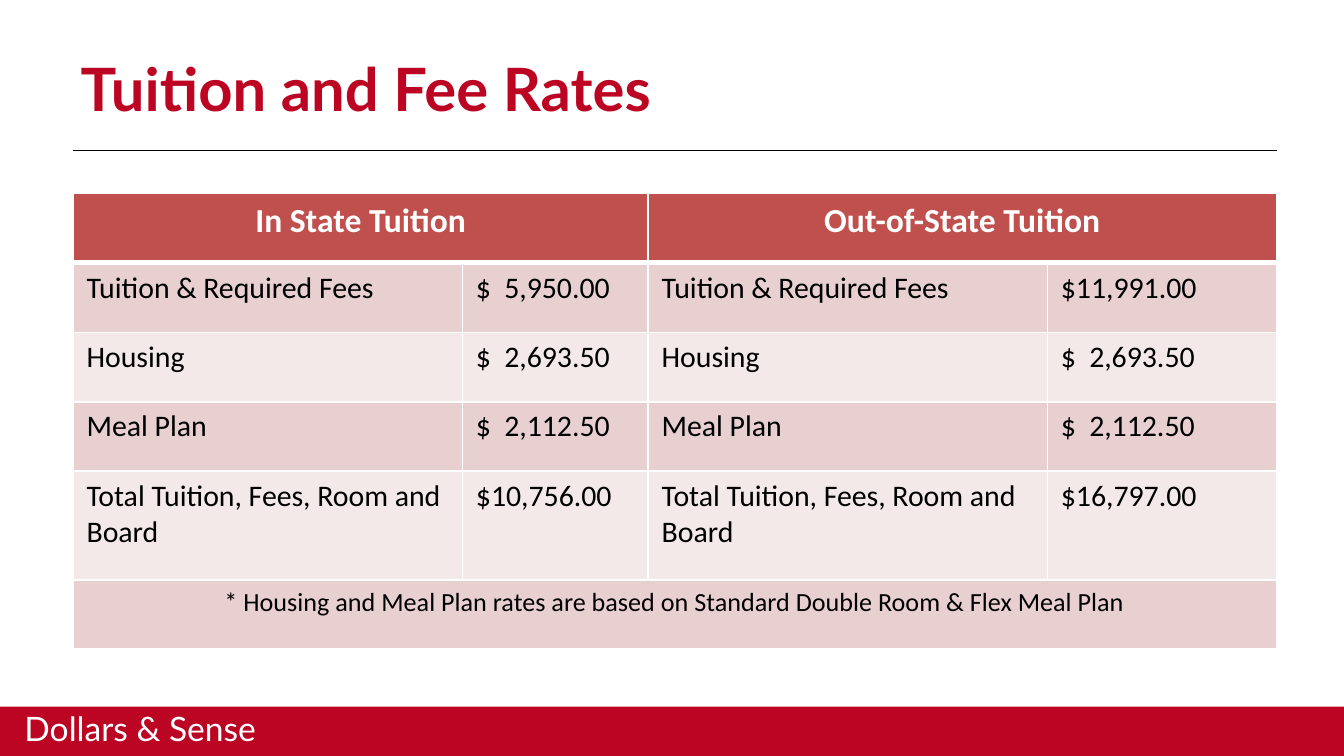
"""Build the tuition and fee rates slide."""
from lxml.etree import SubElement
from pptx import Presentation
from pptx.dml.color import RGBColor
from pptx.enum.shapes import MSO_CONNECTOR, MSO_SHAPE
from pptx.enum.text import MSO_ANCHOR, PP_ALIGN
from pptx.oxml import parse_xml
from pptx.oxml.ns import nsdecls, qn
from pptx.util import Pt

RED = RGBColor(0xBC, 0x05, 0x23)
HEADER = RGBColor(0xC0, 0x50, 0x4D)
BAND_DARK = RGBColor(0xE8, 0xD0, 0xD0)
BAND_LIGHT = RGBColor(0xF4, 0xE9, 0xE9)
BLACK = RGBColor(0, 0, 0)
WHITE = RGBColor(0xFF, 0xFF, 0xFF)


def add_span(para, text, font, size, color, bold=False):
    span = para.add_run()
    span.text = text
    span.font.name = font
    span.font.size = Pt(size)
    span.font.color.rgb = color
    span.font.bold = bold


def set_borders(cell, widths):
    properties = cell._tc.get_or_add_tcPr()
    for index, (side, width) in enumerate(widths.items()):
        properties.insert(index, parse_xml(
            f'<a:ln{side} {nsdecls("a")} w="{Pt(width)}"><a:solidFill>'
            f'<a:srgbClr val="{WHITE}"/></a:solidFill></a:ln{side}>'))


deck = Presentation()
deck.slide_width, deck.slide_height = Pt(720), Pt(405)
page = deck.slides.add_slide(deck.slide_layouts[5])

bar = page.shapes.add_shape(MSO_SHAPE.RECTANGLE, Pt(0), Pt(378.6), Pt(720), Pt(26.4))
bar.shadow.inherit = False
bar.fill.solid()
bar.fill.fore_color.rgb = RED
bar.line.fill.background()

title = page.shapes.title
title.left, title.top, title.width, title.height = Pt(36), Pt(24), Pt(648), Pt(67.5)
title.text_frame.vertical_anchor = MSO_ANCHOR.TOP
title_para = title.text_frame.paragraphs[0]
title_para.alignment = PP_ALIGN.LEFT
add_span(title_para, "Tuition and Fee Rates", "Lato", 32, RED, True)

footer = page.shapes.add_textbox(Pt(6), Pt(375.8), Pt(248), Pt(29))
footer.text_frame.word_wrap = True
add_span(footer.text_frame.paragraphs[0], "Dollars & Sense", "Lato", 18, WHITE)

rule = page.shapes.add_connector(MSO_CONNECTOR.STRAIGHT, Pt(39), Pt(80.8), Pt(684), Pt(80.8))
rule.line.color.rgb = BLACK
rule.line.width = Pt(0.75)
SubElement(rule._element.spPr, qn("a:effectLst"))

headings = ["In State Tuition", "", "Out-of-State Tuition", ""]
rates = [
    ("Tuition & Required Fees", "$\t5,950.00", "$11,991.00"),
    ("Housing", "$\t2,693.50", "$\t2,693.50"),
    ("Meal Plan", "$\t2,112.50", "$\t2,112.50"),
    ("Total Tuition, Fees, Room and Board", "$10,756.00", "$16,797.00"),
]
note = "* Housing and Meal Plan rates are based on Standard Double Room & Flex Meal Plan"
rows = [headings]
rows += [[item, in_state, item, out_of_state] for item, in_state, out_of_state in rates]
rows.append([note, "", "", ""])
column_widths = [208.6, 99.5, 213.9, 122.6]
row_heights = [37.2, 37.2, 37.2, 37.2, 58.2, 37.2]

table = page.shapes.add_table(
    len(rows), len(column_widths), Pt(39.2), Pt(103.7),
    Pt(sum(column_widths)), Pt(sum(row_heights))).table
for column, width in zip(table.columns, column_widths):
    column.width = Pt(width)
for row, height in zip(table.rows, row_heights):
    row.height = Pt(height)

last = len(rows) - 1
for row_index, texts in enumerate(rows):
    for column_index, text in enumerate(texts):
        cell = table.cell(row_index, column_index)
        cell.fill.solid()
        band = BAND_DARK if row_index % 2 else BAND_LIGHT
        cell.fill.fore_color.rgb = HEADER if row_index == 0 else band
        set_borders(cell, {"L": 1, "R": 1, "T": 3 if row_index == 1 else 1,
                           "B": 3 if row_index == 0 else 1})
        if not text:
            continue
        para = cell.text_frame.paragraphs[0]
        if "\t" in text:
            tabs = SubElement(para._p.get_or_add_pPr(), qn("a:tabLst"))
            SubElement(tabs, qn("a:tab"), pos=str(Pt(15.2)), algn="l")
        if row_index in (0, last):
            para.alignment = PP_ALIGN.CENTER
        if row_index == 0:
            add_span(para, text, "Calibri", 18, WHITE, True)
        else:
            add_span(para, text, "Calibri", 14 if row_index == last else 16, BLACK)

table.cell(0, 0).merge(table.cell(0, 1))
table.cell(0, 2).merge(table.cell(0, 3))
table.cell(last, 0).merge(table.cell(last, 3))

deck.save("out.pptx")
